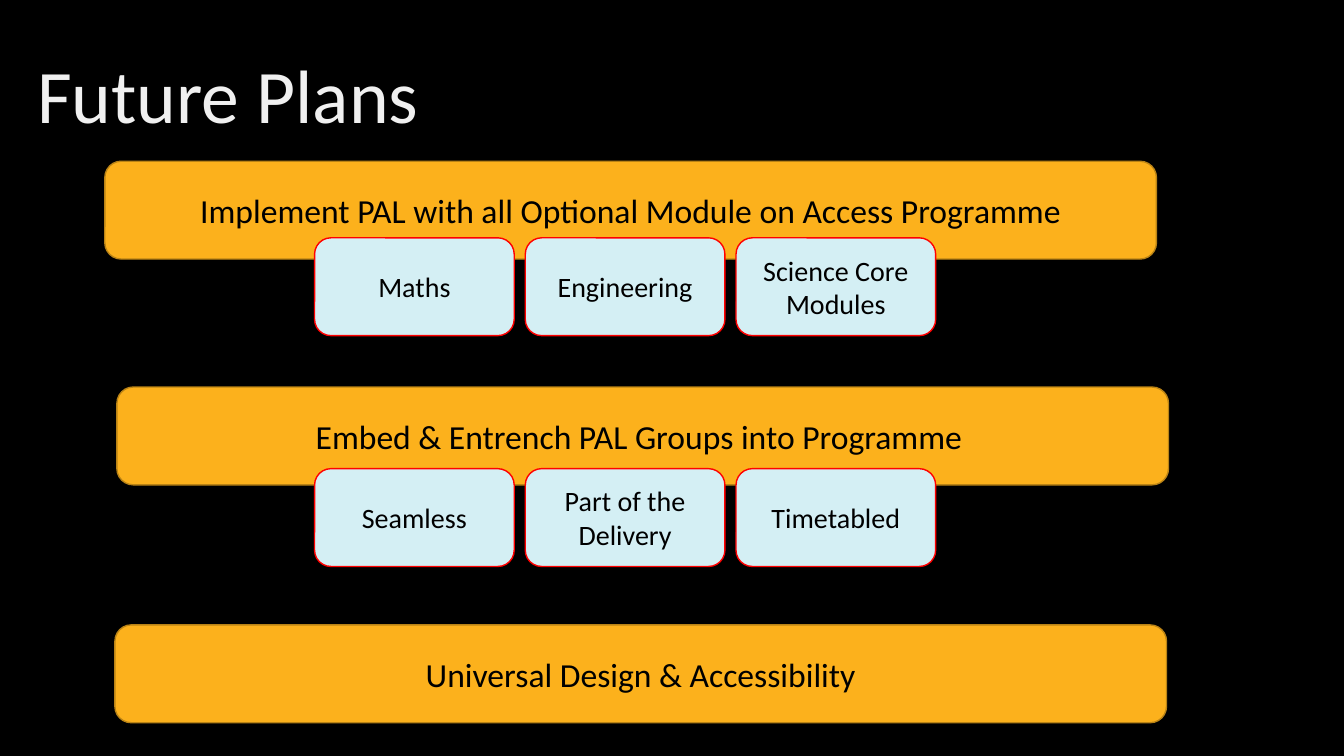
"""Build the Future Plans slide."""
from pptx import Presentation
from pptx.dml.color import RGBColor
from pptx.enum.shapes import MSO_SHAPE
from pptx.enum.text import MSO_ANCHOR, PP_ALIGN
from pptx.util import Inches, Pt

COLORS = {
    "background": "000000",
    "title": "F0F0F0",
    "text": "000000",
    "bar": "FCB11C",
    "bar_line": "BA8315",
    "card": "D4EFF4",
    "card_line": "FF0000",
}
BOX_HEIGHT = 0.97
BAR_WIDTH = 10.43
CARD_LEFT, CARD_WIDTH, CARD_PITCH = 3.12, 1.98, 2.09

PLANS = [
    (1.04, 1.6, "Implement PAL with all Optional Module on Access Programme",
     2.36, ["Maths", "Engineering", "Science Core Modules"]),
    (1.16, 3.84, "Embed & Entrench PAL Groups into Programme ",
     4.65, ["Seamless", "Part of the Delivery", "Timetabled"]),
    (1.14, 6.2, "Universal Design & Accessibility", None, []),
]


class SlideBuilder:
    def __init__(self, prs, font="Calibri"):
        self.font = font
        self.s = prs.slides.add_slide(prs.slide_layouts[6])
        fill = self.s.background.fill
        fill.solid()
        fill.fore_color.rgb = self.color("background")

    def color(self, name):
        return RGBColor.from_string(COLORS[name])

    def set_text(self, sp, text, size, color, align):
        tf = sp.text_frame
        tf.word_wrap = True
        tf.vertical_anchor = MSO_ANCHOR.MIDDLE
        tf.text = text
        p = tf.paragraphs[0]
        p.alignment = align
        r = p.runs[0]
        r.font.name = self.font
        r.font.size = Pt(size)
        r.font.color.rgb = self.color(color)
        return p

    def title(self, text, left, top, width, height):
        sp = self.s.shapes.add_textbox(
            Inches(left), Inches(top), Inches(width), Inches(height))
        p = self.set_text(sp, text, 54, "title", PP_ALIGN.LEFT)
        p.line_spacing = 0.9

    def box(self, text, left, top, width, style, size):
        sp = self.s.shapes.add_shape(
            MSO_SHAPE.ROUNDED_RECTANGLE,
            Inches(left), Inches(top), Inches(width), Inches(BOX_HEIGHT))
        sp.shadow.inherit = False
        sp.fill.solid()
        sp.fill.fore_color.rgb = self.color(style)
        sp.line.color.rgb = self.color(style + "_line")
        sp.line.width = Pt(1)
        self.set_text(sp, text, size, "text", PP_ALIGN.CENTER)

    def bar(self, text, left, top):
        self.box(text, left, top, BAR_WIDTH, "bar", 24)

    def card(self, text, column, top):
        left = CARD_LEFT + column * CARD_PITCH
        self.box(text, left, top, CARD_WIDTH, "card", 20)


def main():
    prs = Presentation()
    prs.slide_width = Inches(13.33)
    prs.slide_height = Inches(7.5)
    slide = SlideBuilder(prs)
    slide.title("Future Plans", 0.27, 0.26, 11.5, 1.45)
    for left, top, heading, card_top, cards in PLANS:
        slide.bar(heading, left, top)
        for column, text in enumerate(cards):
            slide.card(text, column, card_top)
    prs.save("out.pptx")


if __name__ == "__main__":
    main()
